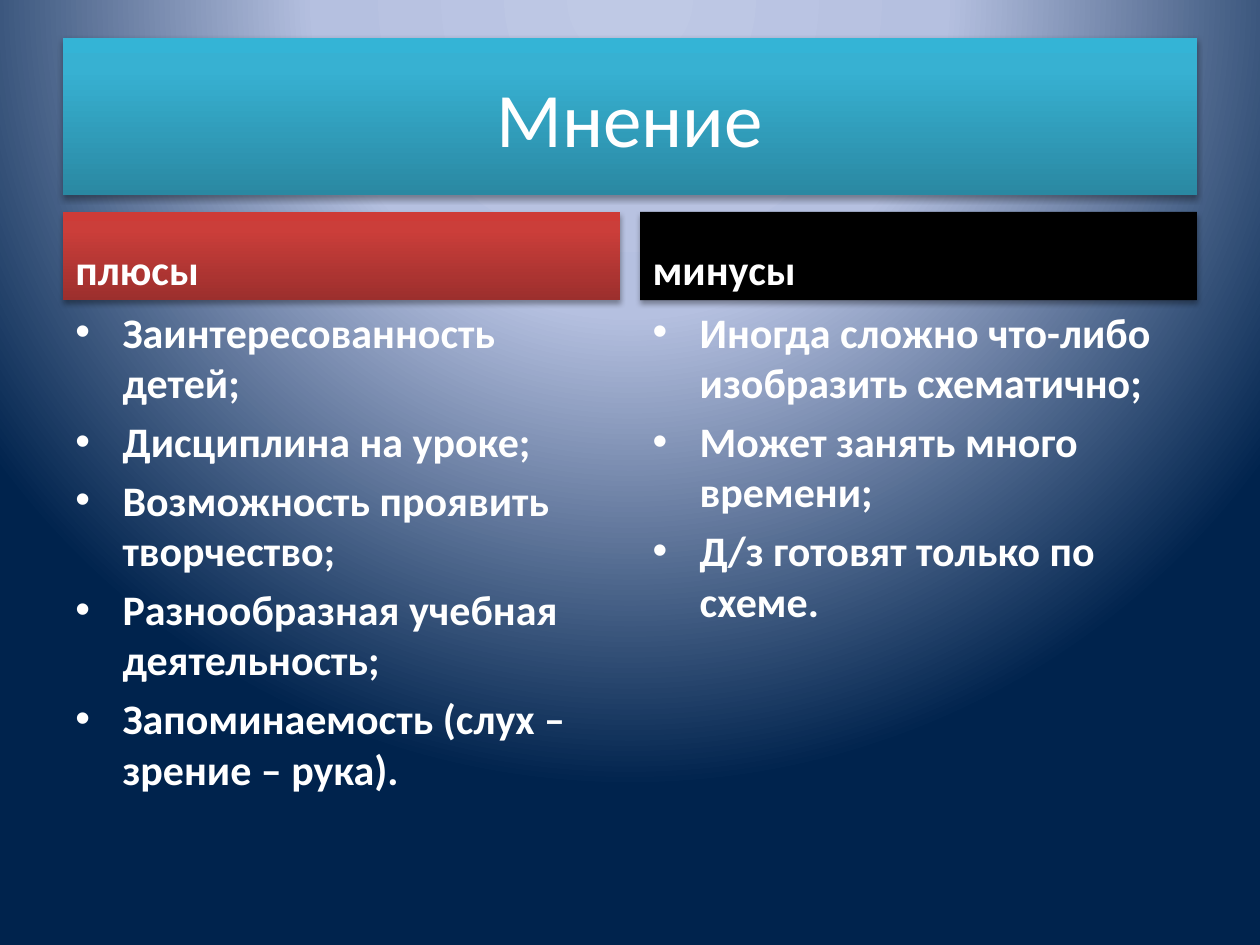
"""Build the opinion slide comparing pluses and minuses."""
from lxml import etree
from pptx import Presentation, util as u
from pptx.dml.color import RGBColor
from pptx.enum import shapes, text
from pptx.oxml import ns

HEADING = "Мнение"
COLUMNS = [
    {"name": "плюсы", "fill": "red", "points": [
        "Заинтересованность детей;",
        "Дисциплина на уроке;",
        "Возможность проявить творчество;",
        "Разнообразная учебная деятельность;",
        "Запоминаемость (слух – зрение – рука).",
    ]},
    {"name": "минусы", "fill": "black", "points": [
        "Иногда сложно что-либо изобразить схематично;",
        "Может занять много времени;",
        "Д/з готовят только по схеме.",
    ]},
]
THEME = {
    "font": "Calibri", "text": "FFFFFF", "title_size": 44, "body_size": 24,
    "sky": [(0, "BFC9E5"), (40, "B5C0E0"), (100, "00234D")],
    "teal": [(0, "2A88A2"), (80, "37B1D2"), (100, "34B4D6")],
    "red": [(0, "9C2F2D"), (80, "CB3E3A"), (100, "CE3B37")],
    "black": "000000", "shadow": "000000",
}
WIDTH, HEIGHT, MARGIN, GAP = 25.4, 19.05, 1.27, 0.41
TITLE_TOP, TITLE_HEIGHT = 0.76, 3.18
LABEL_TOP, LABEL_HEIGHT = 4.27, 1.78
LIST_HEIGHT, INDENT = 10.97, 0.95
CONTENT_WIDTH = WIDTH - 2 * MARGIN
COLUMN_WIDTH = (CONTENT_WIDTH - GAP * (len(COLUMNS) - 1)) / len(COLUMNS)
UPWARD = '<a:lin ang="16200000" scaled="0"/>'
GLOW = ('<a:path path="circle"><a:fillToRect l="50000" t="-80000" '
        'r="50000" b="180000"/></a:path>')


def drawing(tag, content, attributes=""):
    """Return a parsed DrawingML element."""
    return etree.fromstring(
        f'<a:{tag} xmlns:a="{ns.nsuri("a")}" {attributes}>{content}</a:{tag}>')


def paint_gradient(owner, stops, direction):
    """Give the owner a gradient with the stops and direction."""
    owner.fill.gradient()
    element = owner.element if hasattr(owner, "element") else slide.element
    blank = element.find(".//" + ns.qn("a:gradFill"))
    marks = "".join(f'<a:gs pos="{place * 1000}"><a:srgbClr val="{colour}"/></a:gs>'
                    for place, colour in stops)
    blank.getparent().replace(blank, drawing(
        "gradFill", f"<a:gsLst>{marks}</a:gsLst>{direction}", 'rotWithShape="1"'))


def style_panel(panel, fill):
    """Fill a panel and cast its soft shadow."""
    if isinstance(fill, str):
        panel.fill.solid()
        panel.fill.fore_color.rgb = RGBColor.from_string(fill)
    else:
        paint_gradient(panel, fill, UPWARD)
    panel.line.fill.background()
    panel.shadow.inherit = False
    effects = panel.element.spPr.find(ns.qn("a:effectLst"))
    effects.append(drawing(
        "outerShdw",
        f'<a:srgbClr val="{THEME["shadow"]}"><a:alpha val="35000"/></a:srgbClr>',
        'blurRad="40000" dist="23000" dir="5400000" rotWithShape="0"'))


def write(part, lines, size, bold, align, anchor):
    """Write the lines into a part, one paragraph each."""
    frame = part.text_frame
    frame.text = "\n".join(lines)
    frame.word_wrap = True
    frame.vertical_anchor = anchor
    for paragraph in frame.paragraphs:
        paragraph.alignment = align
        paragraph.space_before = u.Pt(size * 0.2 if bold else 0)
        font = paragraph.runs[0].font
        font.name, font.size, font.bold = THEME["font"], u.Pt(size), bold
        font.color.rgb = RGBColor.from_string(THEME["text"])


def add_bullets(part):
    """Set hanging bullets on every paragraph."""
    for paragraph in part.text_frame.paragraphs:
        properties = paragraph._p.get_or_add_pPr()
        properties.set("marL", str(u.Cm(INDENT)))
        properties.set("indent", str(-u.Cm(INDENT)))
        properties.append(drawing("buFont", "", 'typeface="Arial"'))
        properties.append(drawing("buChar", "", 'char="•"'))


def add_column(left, column):
    """Add a column label with its list of points."""
    x, width = u.Cm(left), u.Cm(COLUMN_WIDTH)
    label = slide.shapes.add_shape(
        shapes.MSO_SHAPE.RECTANGLE, x, u.Cm(LABEL_TOP), width, u.Cm(LABEL_HEIGHT))
    style_panel(label, THEME[column["fill"]])
    write(label, [column["name"]], THEME["body_size"], True,
          text.PP_ALIGN.LEFT, text.MSO_ANCHOR.BOTTOM)
    points = slide.shapes.add_textbox(
        x, u.Cm(LABEL_TOP + LABEL_HEIGHT), width, u.Cm(LIST_HEIGHT))
    write(points, column["points"], THEME["body_size"], True,
          text.PP_ALIGN.LEFT, text.MSO_ANCHOR.TOP)
    add_bullets(points)


deck = Presentation()
deck.slide_width, deck.slide_height = u.Cm(WIDTH), u.Cm(HEIGHT)
slide = deck.slides.add_slide(deck.slide_layouts[5])
paint_gradient(slide.background, THEME["sky"], GLOW)

title = slide.shapes.title
title.left, title.top = u.Cm(MARGIN), u.Cm(TITLE_TOP)
title.width, title.height = u.Cm(CONTENT_WIDTH), u.Cm(TITLE_HEIGHT)
style_panel(title, THEME["teal"])
write(title, [HEADING], THEME["title_size"], False,
      text.PP_ALIGN.CENTER, text.MSO_ANCHOR.MIDDLE)

for index, column in enumerate(COLUMNS):
    add_column(MARGIN + index * (COLUMN_WIDTH + GAP), column)

deck.save("out.pptx")
